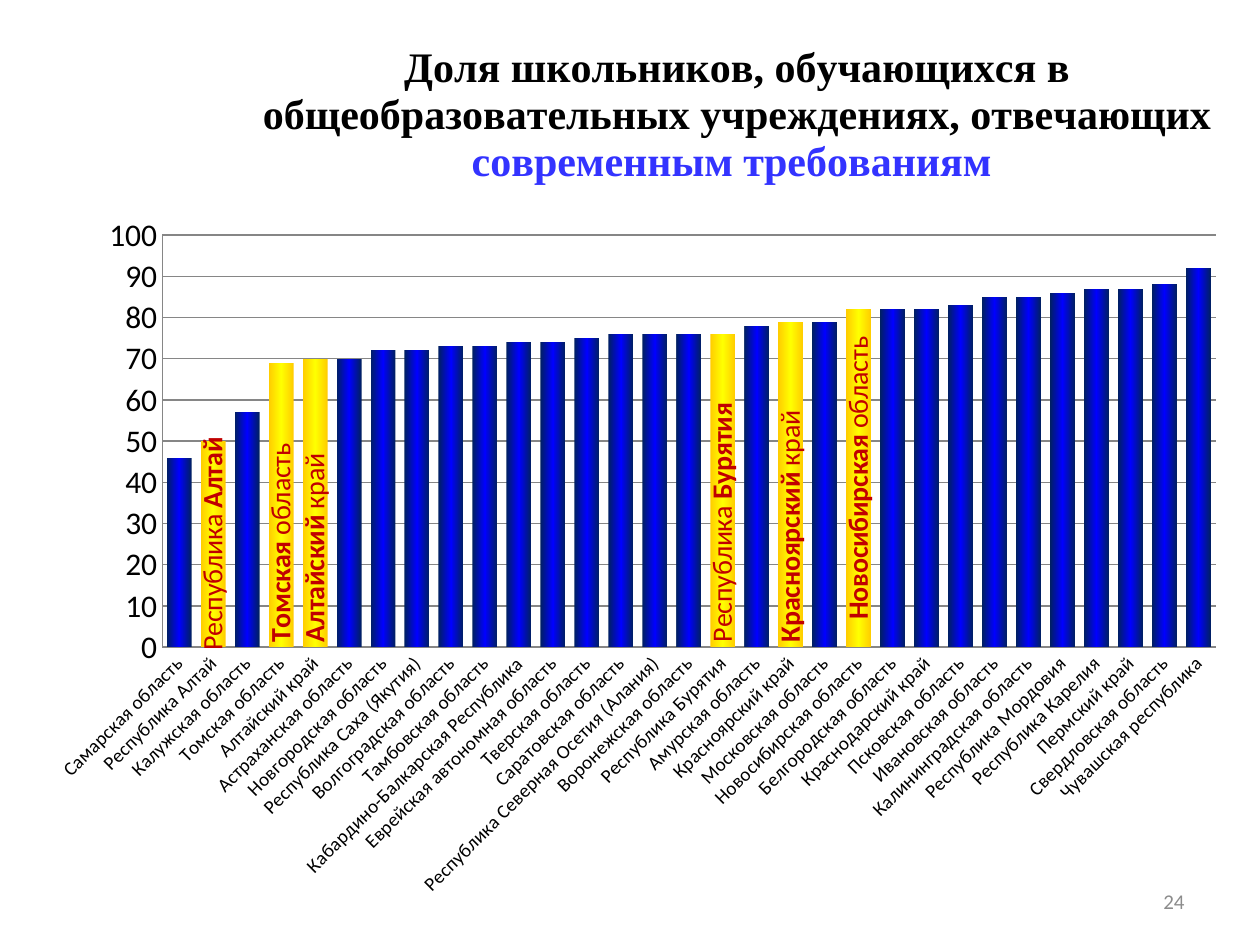
from copy import deepcopy
from dataclasses import dataclass

from pptx import Presentation
from pptx.chart.data import CategoryChartData
from pptx.dml.color import RGBColor
from pptx.enum.chart import XL_CHART_TYPE, XL_LABEL_POSITION, XL_TICK_MARK
from pptx.enum.text import MSO_ANCHOR, PP_ALIGN
from pptx.oxml import parse_xml
from pptx.oxml.ns import nsdecls, qn
from pptx.util import Inches, Pt

COLUMNS = XL_CHART_TYPE.COLUMN_CLUSTERED
CENTER = XL_LABEL_POSITION.CENTER
BASE = XL_LABEL_POSITION.INSIDE_BASE
NO_TICK = XL_TICK_MARK.NONE
MIDDLE = MSO_ANCHOR.MIDDLE
RIGHT = PP_ALIGN.RIGHT
DEGREE = 60000


@dataclass(frozen=True)
class Theme:
    body: str = "Calibri"
    heading: str = "Times New Roman"
    title_size: int = 24
    value_size: int = 18
    label_size: int = 16
    number_size: int = 12
    category_size: int = 11
    black: str = "000000"
    accent: str = "3333FF"
    label: str = "C00000"
    grid: str = "868686"
    number: str = "8C8C8C"
    blue_bar: tuple = ("002060", "0000FF", "002060")
    yellow_bar: tuple = ("FFCC00", "FFFF00", "FFCC00")


@dataclass(frozen=True)
class BarLabel:
    """Label of a highlighted bar: (text, bold) pieces and its place."""
    index: int
    wording: tuple
    position: object = BASE


THEME = Theme()

REGIONS = [
    ("Самарская область", 46), ("Республика Алтай", 50),
    ("Калужская область", 57), ("Томская область", 69),
    ("Алтайский край", 70), ("Астраханская область", 70),
    ("Новгородская область", 72), ("Республика Саха (Якутия)", 72),
    ("Волгоградская область", 73), ("Тамбовская область", 73),
    ("Кабардино-Балкарская Республика", 74),
    ("Еврейская автономная область", 74),
    ("Тверская область", 75), ("Саратовская область", 76),
    ("Республика Северная Осетия (Алания)", 76),
    ("Воронежская область", 76), ("Республика Бурятия", 76),
    ("Амурская область", 78), ("Красноярский край", 79),
    ("Московская область", 79), ("Новосибирская область", 82),
    ("Белгородская область", 82), ("Краснодарский край", 82),
    ("Псковская область", 83), ("Ивановская область", 85),
    ("Калининградская область", 85), ("Республика Мордовия", 86),
    ("Республика Карелия", 87), ("Пермский край", 87),
    ("Свердловская область", 88), ("Чувашская республика", 92),
]

BAR_LABELS = [
    BarLabel(1, (("Республика ", False), ("Алтай", True)), CENTER),
    BarLabel(3, (("Томская", True), (" область", False))),
    BarLabel(4, (("Алтайский", True), (" край", False))),
    BarLabel(16, (("Республика ", False), ("Бурятия", True))),
    BarLabel(18, (("Красноярский", True), (" край", False))),
    BarLabel(20, (("Новосибирская", True), (" область", False)), CENTER),
]


def style_font(font, size: int, color: str, name: str = THEME.body,
               bold: bool = False) -> None:
    formats = {"name": name, "size": Pt(size), "bold": bold}
    for key, value in formats.items():
        setattr(font, key, value)
    font.color.rgb = RGBColor.from_string(color)


def add_run(p, text: str, size: int, color: str, **font) -> None:
    r = p.add_run()
    r.text = text
    style_font(r.font, size, color, **font)


def rotate(body_pr, degrees: int) -> None:
    body_pr.set("rot", str(degrees * DEGREE))
    body_pr.set("vert", "horz")


def fill_gradient(fmt, parent, colors: tuple) -> None:
    """Three evenly spaced stops, running left to right."""
    fmt.fill.gradient()
    fmt.fill.gradient_angle = 0
    stop_list = parent.find(qn("c:spPr")).find(".//" + qn("a:gsLst"))
    stop_list.append(deepcopy(stop_list[-1]))
    for i, (stop, color) in enumerate(zip(fmt.fill.gradient_stops, colors)):
        stop.position = i / 2
        stop.color.rgb = RGBColor.from_string(color)


def set_layout(parent, before: str, **values) -> None:
    """Place a chart element by fractions of the chart area."""
    for old in parent.findall(qn("c:layout")):
        parent.remove(old)
    inner = '<c:layoutTarget val="inner"/>' if "w" in values else ""
    modes = "".join(f'<c:{k}Mode val="edge"/>' for k in "xy")
    sizes = "".join(f'<c:{k} val="{v}"/>' for k, v in values.items())
    layout = parse_xml(f'<c:layout {nsdecls("c")}><c:manualLayout>{inner}'
                       f'{modes}{sizes}</c:manualLayout></c:layout>')
    parent.find(qn(before)).addprevious(layout)


def add_title(chart) -> None:
    title = chart.chart_title
    p = title.text_frame.paragraphs[0]
    font = {"name": THEME.heading, "bold": True}
    add_run(p, "Доля школьников, обучающихся в общеобразовательных "
               "учреждениях, отвечающих ", THEME.title_size, THEME.black, **font)
    add_run(p, "современным требованиям ", THEME.title_size, THEME.accent,
            **font)
    title.include_in_layout = False
    set_layout(title._element, "c:overlay", x=0.19, y=0.02)


def style_axes(chart) -> None:
    grey = RGBColor.from_string(THEME.grid)
    values, categories = chart.value_axis, chart.category_axis
    values.minimum_scale, values.maximum_scale, values.major_unit = 0, 100, 10
    values.has_major_gridlines = True
    for axis, size in ((values, THEME.value_size),
                       (categories, THEME.category_size)):
        axis.major_tick_mark = axis.minor_tick_mark = NO_TICK
        axis.format.line.color.rgb = grey
        style_font(axis.tick_labels.font, size, THEME.black)
    values.major_gridlines.format.line.color.rgb = grey
    rotate(categories._element.find(qn("c:txPr")).find(qn("a:bodyPr")), -45)


def highlight_bar(series, label: BarLabel) -> None:
    point = series.points[label.index]
    point.format.fill.gradient()
    d_pt = next(e for e in series._element.findall(qn("c:dPt"))
                if e.find(qn("c:idx")).get("val") == str(label.index))
    fill_gradient(point.format, d_pt, THEME.yellow_bar)
    tf = point.data_label.text_frame
    rotate(tf._txBody.find(qn("a:bodyPr")), -90)
    for text, bold in label.wording:
        add_run(tf.paragraphs[0], text, THEME.label_size, THEME.label,
                bold=bold)
    point.data_label.position = label.position


def add_region_chart(s) -> None:
    data = CategoryChartData()
    data.categories = [name for name, _ in REGIONS]
    data.add_series("Series 1", [value for _, value in REGIONS])
    chart = s.shapes.add_chart(COLUMNS, Inches(0.23), Inches(0.16),
                               Inches(9.61), Inches(7.11), data).chart
    style_font(chart.font, THEME.value_size, THEME.black)
    chart.has_legend = False
    add_title(chart)
    style_axes(chart)
    plot = chart.plots[0]
    plot.gap_width, plot.overlap, plot.vary_by_categories = 36, -1, False
    set_layout(plot._element.getparent(), "c:barChart",
               x=0.11, y=0.24, w=0.87, h=0.46)
    series = plot.series[0]
    fill_gradient(series.format, series._element, THEME.blue_bar)
    for label in BAR_LABELS:
        highlight_bar(series, label)


def add_page_number(s) -> None:
    tf = s.shapes.add_textbox(Inches(7.17), Inches(6.95),
                              Inches(2.33), Inches(0.4)).text_frame
    tf.word_wrap = True
    tf.vertical_anchor = MIDDLE
    p = tf.paragraphs[0]
    p.alignment = RIGHT
    add_run(p, "24", THEME.number_size, THEME.number)


def main() -> None:
    prs = Presentation()
    prs.slide_width, prs.slide_height = Inches(10), Inches(7.5)
    # The heading belongs to the chart, so the blank layout is enough
    s = prs.slides.add_slide(prs.slide_layouts[6])
    add_region_chart(s)
    add_page_number(s)
    prs.save("out.pptx")


if __name__ == "__main__":
    main()
